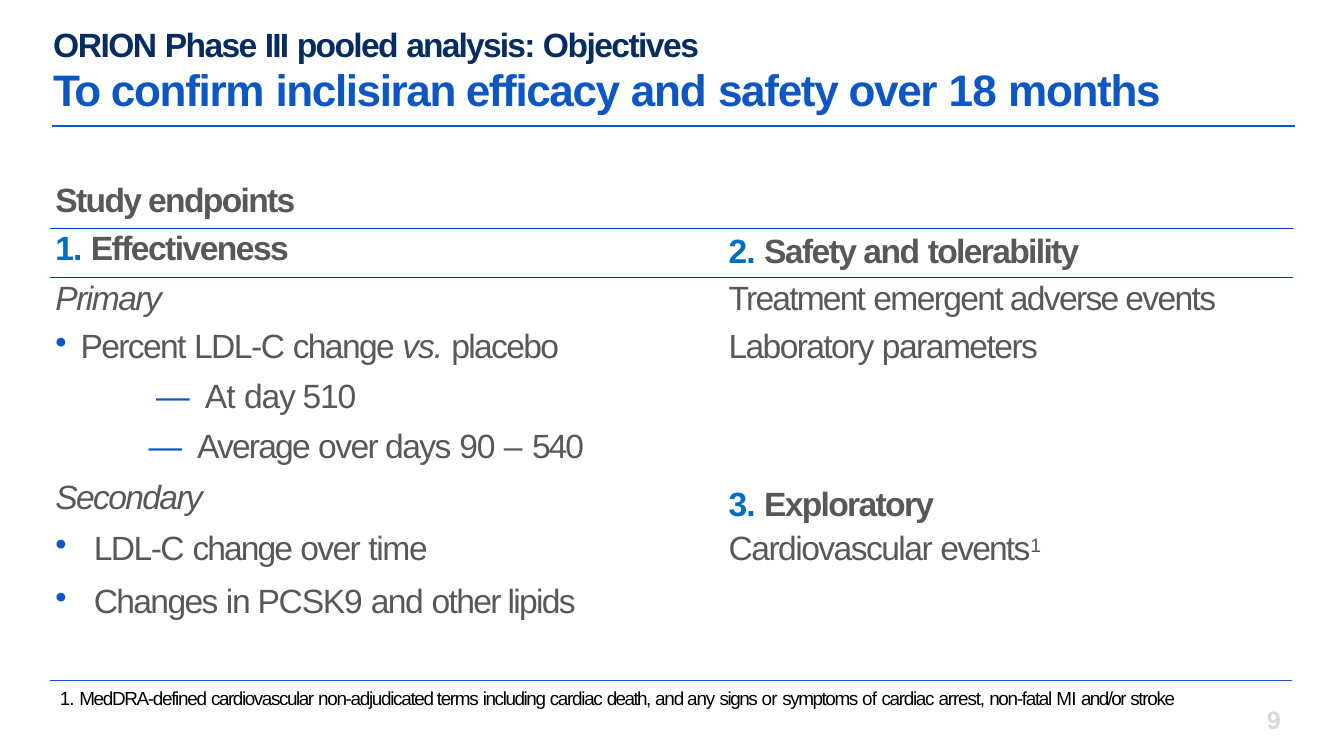
"""Build the ORION pooled analysis objectives slide."""
from lxml.etree import SubElement
from pptx import Presentation
from pptx.dml.color import RGBColor
from pptx.enum.shapes import MSO_CONNECTOR
from pptx.enum.text import PP_ALIGN
from pptx.oxml import parse_xml
from pptx.oxml.ns import nsdecls, qn
from pptx.util import Pt

HEX = {"navy": "072C61", "blue": "0D57C4", "rule": "0033CC", "num": "006FC0",
       "text": "585858", "page": "D9D9D9", "note": "000000"}
FONT = "Arial"
PLAIN = "{2D5ABB26-0587-4C30-8999-92F81FD0307C}"

HEAD = [("ORION ", -1.1), ("Phase ", -1.2), ("III ", -1.3), ("pooled ", -1.2),
        ("analysis: ", -1.3), ("Objectives", -1.1)]
TITLE = [("To ", -1.8), ("confirm ", -0.9), ("inclisiran efficacy ", -1),
         ("and ", -0.8), ("safety over ", -0.9), ("18 ", -0.6), ("months", -0.9)]
NOTE = [("1. ", -0.5), ("MedDRA-defined ", -0.9), ("cardiovascular ", -1),
        ("non-adjudicated terms ", -0.9), ("including ", -1), ("cardiac ", -0.9),
        ("death, ", -1.1), ("and any ", -0.8), ("signs ", -1), ("or ", -0.5),
        ("symptoms ", -1), ("of ", -0.5), ("cardiac ", -0.9), ("arrest, ", -0.8),
        ("non-fatal ", -0.9), ("MI ", -0.5), ("and/or ", -1.1), ("stroke", -0.9)]

COLS = [422.6, 465.1]
ROWS = [33.1, 34.6, 33.8, 36, 36, 36, 38.9, 33.8, 31.7]
EDGES = {0: 1, 1: 0.5}
LEFT, RIGHT = 3.6, 61.9
CELLS = [
    (0, 0, {"ind": LEFT, "line": 26.6}, [("Study endpoints", -1.2, "b")]),
    (1, 0, {"ind": LEFT, "top": 0.8},
     [("1. ", -0.7, "b", "num"), ("Effectiveness", -1.1, "b")]),
    (1, 1, {"ind": RIGHT, "top": 3.2},
     [("2. ", -0.7, "b", "num"), ("Safety and ", -1.1, "b"),
      ("tolerability", -1.2, "b")]),
    (2, 0, {"ind": LEFT, "line": 28.8}, [("Primary", -1.1, "i")]),
    (2, 1, {"ind": RIGHT, "line": 28.8},
     [("Treatment ", -1.3), ("emergent adverse events", -1.2)]),
    (3, 0, {"ind": 21.6, "hang": 18, "top": 2.3},
     [("Percent ", -1.2), ("LDL-C ", -1.1), ("change ", -1.2),
      ("vs. ", -0.8, "i"), ("placebo", -1.2)]),
    (3, 1, {"ind": RIGHT, "top": 2.3},
     [("Laboratory ", -1.2), ("parameters", -1.1)]),
    (4, 0, {"ind": 75.6, "top": 2.4},
     [("— ", 2, "", "blue"), ("At ", -0.6), ("day 510", -0.9)]),
    (5, 0, {"ind": 28.8, "top": 2.4, "mid": True},
     [("— ", 2, "", "blue"), ("Average ", -1.3), ("over days ", -1.1),
      ("90 ", -0.7), ("– ", 0), ("540", -1.4)]),
    (6, 0, {"ind": LEFT, "top": 2.3}, [("Secondary", -1.2, "i")]),
    (6, 1, {"ind": RIGHT, "top": 7.3},
     [("3. ", -0.7, "b", "num"), ("Exploratory", -1.2, "b")]),
    (7, 0, {"ind": 31, "hang": 27.4},
     [("LDL-C ", -1.1), ("change ", -1.4), ("over ", -1.2), ("time", -1)]),
    (7, 1, {"ind": RIGHT},
     [("Cardiovascular ", -1.1), ("events", -1.3), ("1", -1.9, "s")]),
    (8, 0, {"ind": 31, "hang": 27.4, "top": 2.4, "line": 28.1},
     [("Changes ", -1.2), ("in PCSK9 ", -0.9), ("and ", -1.1),
      ("other lipids", -1.2)]),
]


def color(name):
    return RGBColor.from_string(HEX[name])


def write(para, runs, size, tint, bold=False):
    for text, gap, *more in runs:
        style = more[0] if more else ""
        run = para.add_run()
        run.text = text
        font = run.font
        font.name, font.size = FONT, Pt(size)
        font.bold = bold or "b" in style
        font.italic = "i" in style
        font.color.rgb = color(more[1] if len(more) > 1 else tint)
        props = run._r.get_or_add_rPr()
        props.set("spc", str(round(gap * 100)))
        if "s" in style:
            props.set("baseline", "24000")


def indent(para, left, hang=0):
    props = para._p.get_or_add_pPr()
    props.set("marL", str(Pt(left)))
    props.set("indent", str(-Pt(hang)))
    if hang:
        tint = SubElement(props, qn("a:buClr"))
        SubElement(tint, qn("a:srgbClr")).set("val", HEX["blue"])
        SubElement(props, qn("a:buChar")).set("char", "•")


def add_box(slide, left, top, width, height, paras, inset=0):
    frame = slide.shapes.add_textbox(Pt(left), Pt(top), Pt(width), Pt(height)).text_frame
    frame.word_wrap = True
    frame.margin_left = frame.margin_right = frame.margin_bottom = 0
    frame.margin_top = Pt(inset)
    for num, (runs, size, tint, bold, line) in enumerate(paras):
        para = frame.add_paragraph() if num else frame.paragraphs[0]
        if line:
            para.line_spacing = Pt(line)
        write(para, runs, size, tint, bold)


def add_rule(slide, left, top, width, weight):
    rule = slide.shapes.add_connector(
        MSO_CONNECTOR.STRAIGHT, Pt(left), Pt(top), Pt(left + width), Pt(top))
    rule.line.color.rgb = color("blue")
    rule.line.width = Pt(weight)
    SubElement(rule._element.spPr, qn("a:effectLst"))


def add_edge(cell, weight):
    edge = parse_xml(
        f'<a:lnB {nsdecls("a")} w="{Pt(weight)}"><a:solidFill>'
        f'<a:srgbClr val="{HEX["rule"]}"/></a:solidFill></a:lnB>')
    cell._tc.get_or_add_tcPr().insert(0, edge)


def add_grid(slide):
    table = slide.shapes.add_table(
        len(ROWS), len(COLS), Pt(36), Pt(130.3), Pt(sum(COLS)), Pt(sum(ROWS))).table
    table.first_row = table.horz_banding = False
    table._tbl.tblPr[0].text = PLAIN
    for col, width in zip(table.columns, COLS):
        col.width = Pt(width)
    for num, (row, height) in enumerate(zip(table.rows, ROWS)):
        row.height = Pt(height)
        for cell in row.cells:
            cell.margin_left = cell.margin_right = 0
            cell.margin_top = cell.margin_bottom = 0
            cell.fill.background()
            if num in EDGES:
                add_edge(cell, EDGES[num])
    for row, col, form, runs in CELLS:
        cell = table.cell(row, col)
        cell.margin_top = Pt(form.get("top", 0))
        para = cell.text_frame.paragraphs[0]
        indent(para, form["ind"], form.get("hang", 0))
        if "line" in form:
            para.line_spacing = Pt(form["line"])
        if "mid" in form:
            para.alignment = PP_ALIGN.CENTER
        write(para, runs, 24, "text")


def main():
    deck = Presentation()
    deck.slide_width, deck.slide_height = Pt(960), Pt(540)
    slide = deck.slides.add_slide(deck.slide_layouts[6])
    add_rule(slide, 37.4, 90, 887.8, 0.75)
    add_rule(slide, 36, 486, 887, 0.25)
    add_box(slide, 38, 18, 796, 65.5, [(HEAD, 24, "navy", True, 27.1),
                                       (TITLE, 31.5, "blue", True, 36.1)], 1)
    add_box(slide, 905, 504, 24, 22.3, [([("9", 0)], 18, "page", True, 20.9)])
    add_grid(slide)
    add_box(slide, 42.7, 488.9, 804, 18.7, [(NOTE, 13.5, "note", False, None)], 1.4)
    deck.save("out.pptx")


if __name__ == "__main__":
    main()
